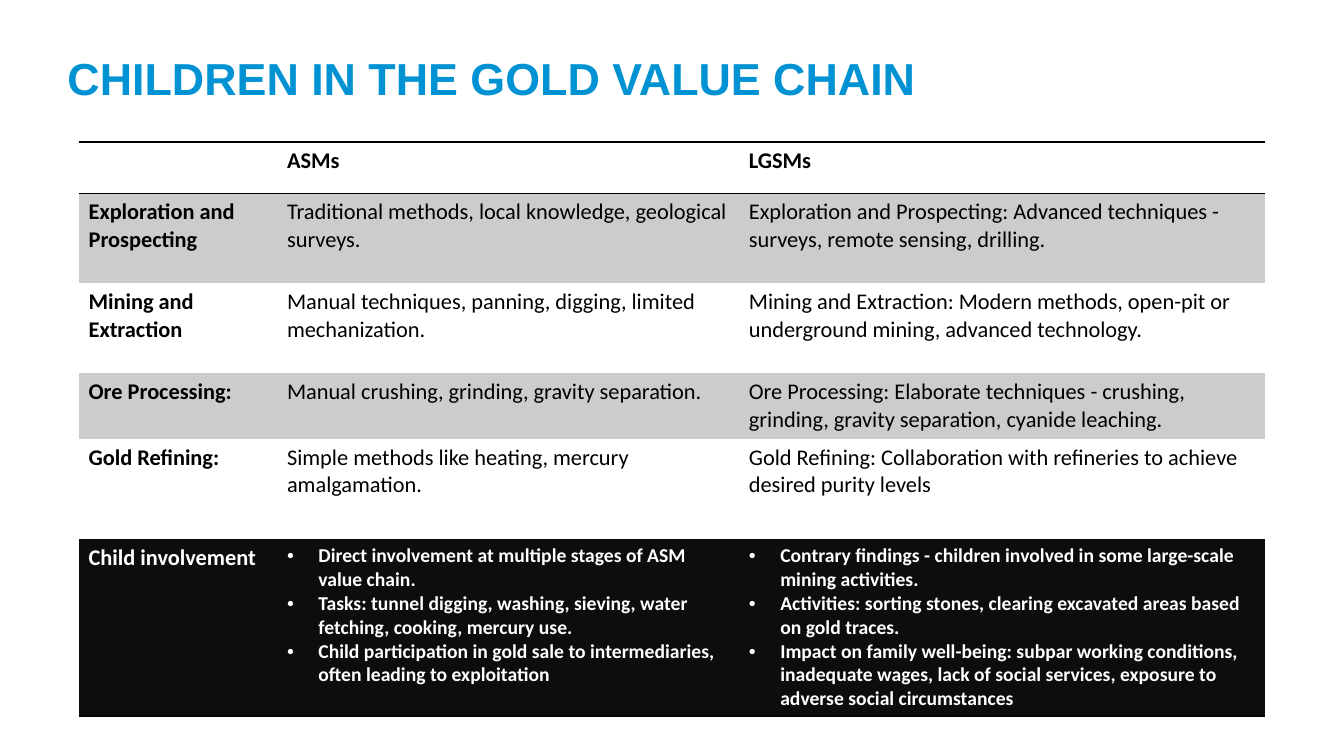
from lxml.etree import SubElement
from pptx import Presentation
from pptx.dml.color import RGBColor
from pptx.enum.text import MSO_ANCHOR, PP_ALIGN
from pptx.oxml.ns import qn
from pptx.util import Cm, Pt

TITLE = "CHILDREN IN THE GOLD VALUE CHAIN"
STAGES = [
    ("", ["ASMs"], ["LGSMs"]),
    ("Exploration and Prospecting",
     ["Traditional methods, local knowledge, geological surveys."],
     ["Exploration and Prospecting: Advanced techniques - surveys, remote sensing, drilling."]),
    ("Mining and Extraction",
     ["Manual techniques, panning, digging, limited mechanization."],
     ["Mining and Extraction: Modern methods, open-pit or underground mining, advanced technology."]),
    ("Ore Processing:",
     ["Manual crushing, grinding, gravity separation."],
     ["Ore Processing: Elaborate techniques - crushing, grinding, gravity separation, cyanide leaching."]),
    ("Gold Refining:",
     ["Simple methods like heating, mercury amalgamation."],
     ["Gold Refining: Collaboration with refineries to achieve desired purity levels"]),
    ("", [], []),
    ("Child involvement",
     ["Direct involvement at multiple stages of ASM value chain.",
      "Tasks: tunnel digging, washing, sieving, water fetching, cooking, mercury use.",
      "Child participation in gold sale to intermediaries, often leading to exploitation"],
     ["Contrary findings - children involved in some large-scale mining activities.",
      "Activities: sorting stones, clearing excavated areas based on gold traces.",
      "Impact on family well-being: subpar working conditions, inadequate wages, "
      "lack of social services, exposure to adverse social circumstances"]),
]
COLUMN_WIDTHS = [5.0, 11.64, 13.26]
ROW_HEIGHTS = [1.29, 2.27, 2.27, 1.65, 1.65, 0.87, 4.48]
HEADER, SPACER, CHILDREN = 0, 5, 6
SHADED = (1, 3)
EDGES = {HEADER: ("a:lnT", "a:lnB"), CHILDREN: ("a:lnB",)}
PLAIN_STYLE = "{2D5ABB26-0587-4C30-8999-92F81FD0307C}"

BLUE = RGBColor(0x00, 0x92, 0xD2)
BLACK = RGBColor(0, 0, 0)
WHITE = RGBColor(0xFF, 0xFF, 0xFF)
GREY = RGBColor(0xCC, 0xCC, 0xCC)
DARK = RGBColor(0x0D, 0x0D, 0x0D)


def style_font(font, name, size, color, bold):
    font.name, font.size, font.bold = name, Pt(size), bold
    font.color.rgb = color


def add_edge(cell, tag):
    line = SubElement(cell._tc.get_or_add_tcPr(), qn(tag), w=str(Pt(1)))
    fill = SubElement(line, qn("a:solidFill"))
    SubElement(fill, qn("a:srgbClr"), val=str(BLACK))


def add_bullet(para):
    props = para._p.get_or_add_pPr()
    props.set("marL", str(Cm(0.79)))
    props.set("indent", str(-Cm(0.79)))
    SubElement(props, qn("a:buFont"), typeface="Arial")
    SubElement(props, qn("a:buChar"), char="•")


def fill_cell(cell, lines, row, column):
    for tag in EDGES.get(row, ()):
        add_edge(cell, tag)
    if row in SHADED or row == CHILDREN:
        cell.fill.solid()
        cell.fill.fore_color.rgb = DARK if row == CHILDREN else GREY
    else:
        cell.fill.background()
    bulleted = row == CHILDREN and column > 0
    size = 12 if row == SPACER else 14 if bulleted else 16
    color = WHITE if row == CHILDREN else BLACK
    bold = column == 0 or row in (HEADER, CHILDREN)
    cell.text_frame.text = "\n".join(lines)
    for para in cell.text_frame.paragraphs:
        if bulleted:
            add_bullet(para)
        style_font(para.font, "Calibri", size, color, bold)
        for span in para.runs:
            style_font(span.font, "Calibri", size, color, bold)


def add_title(page):
    title = page.shapes.title
    title.left, title.top, title.width, title.height = Cm(1.7), Cm(1.27), Cm(30.2), Cm(2.74)
    frame = title.text_frame
    frame.text = TITLE
    frame.margin_left = frame.margin_right = frame.margin_top = frame.margin_bottom = 0
    frame.vertical_anchor = MSO_ANCHOR.TOP
    frame.word_wrap = True
    para = frame.paragraphs[0]
    para.alignment = PP_ALIGN.LEFT
    style_font(para.runs[0].font, "Arial", 32, BLUE, True)


def add_stages(page):
    table = page.shapes.add_table(
        len(STAGES), len(COLUMN_WIDTHS), Cm(1.98), Cm(3.58),
        Cm(sum(COLUMN_WIDTHS)), Cm(sum(ROW_HEIGHTS))).table
    table.first_row = table.horz_banding = False
    table._tbl.tblPr.find(qn("a:tableStyleId")).text = PLAIN_STYLE
    for column, width in zip(table.columns, COLUMN_WIDTHS):
        column.width = Cm(width)
    for row, height in zip(table.rows, ROW_HEIGHTS):
        row.height = Cm(height)
    for row, (stage, small_scale, large_scale) in enumerate(STAGES):
        for column, lines in enumerate(([stage], small_scale, large_scale)):
            fill_cell(table.cell(row, column), lines, row, column)


def main():
    deck = Presentation()
    deck.slide_width, deck.slide_height = Cm(33.87), Cm(19.05)
    page = deck.slides.add_slide(deck.slide_layouts[5])
    add_title(page)
    add_stages(page)
    deck.save("out.pptx")


if __name__ == "__main__":
    main()
